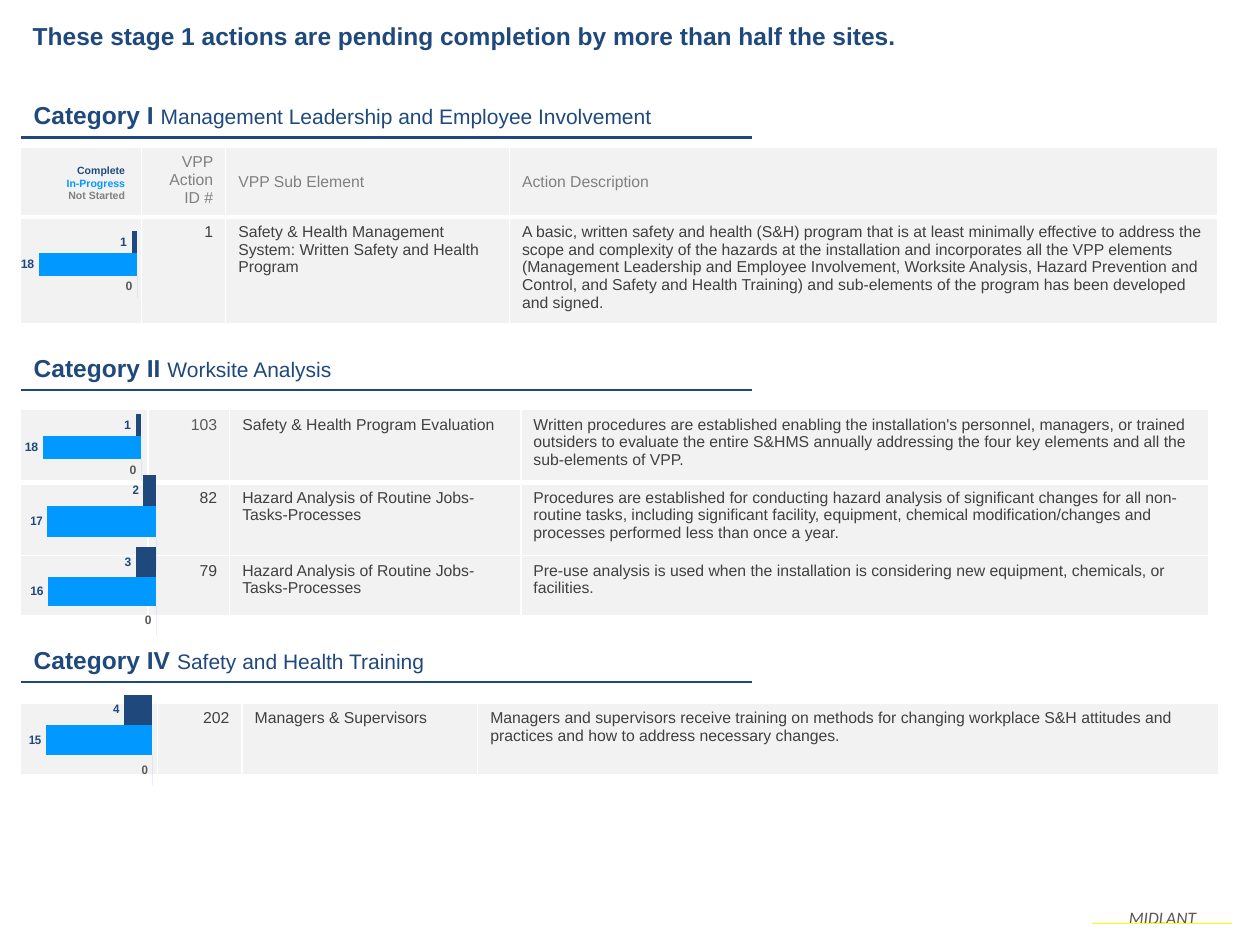
from dataclasses import dataclass

from lxml import etree
from pptx import Presentation
from pptx import util as u
from pptx.chart.data import CategoryChartData
from pptx.dml.color import RGBColor
from pptx.enum import chart as ch, shapes, text
from pptx.oxml.ns import qn


@dataclass(frozen=True)
class Theme:
    navy: str = "1F497D"
    blue: str = "0198FF"
    bar: str = "558ED5"
    grey: str = "808080"
    dim: str = "595959"
    ink: str = "404040"
    panel: str = "F2F2F2"
    white: str = "FFFFFF"
    yellow: str = "FFFF00"
    body_font: str = "Arial"
    footer_font: str = "Calibri"
    title: int = 14
    subtitle: int = 12
    footer: int = 10
    body: int = 9
    label: int = 7
    legend: int = 6


def sub(parent, tag, **attrs):
    return etree.SubElement(parent, qn(tag), {k: str(v) for k, v in attrs.items()})


class Board:
    def __init__(self, theme, width, height):
        self.t = theme
        self.prs = Presentation()
        self.prs.slide_width, self.prs.slide_height = u.Cm(width), u.Cm(height)
        self.s = self.prs.slides.add_slide(self.prs.slide_layouts[6])

    def style(self, font, size, color, bold=False, italic=False, name=None):
        font.name = name or self.t.body_font
        font.size, font.bold, font.italic = u.Pt(size), bold, italic
        font.color.rgb = RGBColor.from_string(color)

    def text(self, box, paragraphs, align=text.PP_ALIGN.LEFT):
        sp = self.s.shapes.add_textbox(*map(u.Cm, box))
        tf = sp.text_frame
        tf.word_wrap = True
        tf.auto_size = text.MSO_AUTO_SIZE.SHAPE_TO_FIT_TEXT
        for i, runs in enumerate(paragraphs):
            p = tf.add_paragraph() if i else tf.paragraphs[0]
            p.alignment = align
            for words, look in runs:
                r = p.add_run()
                r.text = words
                self.style(r.font, **look)

    def line(self, x1, x2, y, color, width):
        sp = self.s.shapes.add_connector(
            shapes.MSO_CONNECTOR.STRAIGHT, *map(u.Cm, (x1, y, x2, y)))
        sp.line.color.rgb = RGBColor.from_string(color)
        sp.line.width = u.Pt(width)
        sub(sp.element.spPr, "a:effectLst")

    def heading(self, y, category, name, width=14.4):
        look = dict(color=self.t.navy)
        self.text((0.43, y, width, 0.86), [[
            (category + " ", dict(look, size=self.t.title, bold=True)),
            (name, dict(look, size=self.t.subtitle))]])
        self.line(0.43, 15.16, y + 0.87, self.t.navy, 1.5)

    def border(self, cell, top, bottom):
        tc_pr = cell._tc.get_or_add_tcPr()
        for side, width in zip("LRTB", (1, 1, top, bottom)):
            ln = sub(tc_pr, "a:ln" + side, w=u.Pt(width))
            sub(sub(ln, "a:solidFill"), "a:srgbClr", val=self.t.white)

    def table(self, y, cols, heights, rows, thick_row=0, header=False, id_colors=()):
        tbl = self.s.shapes.add_table(
            len(rows), len(cols), *map(u.Cm, (0.41, y, sum(cols), sum(heights)))).table
        tbl.first_row = tbl.horz_banding = False
        for col, width in zip(tbl.columns, cols):
            col.width = u.Cm(width)
        for i, row in enumerate(rows):
            tbl.rows[i].height = u.Cm(heights[i])
            is_head = header and i == 0
            for j, words in enumerate(("", *row)):
                cell = tbl.cell(i, j)
                self.border(cell, 3 if i == thick_row + 1 else 1, 3 if i == thick_row else 1)
                cell.fill.solid()
                cell.fill.fore_color.rgb = RGBColor.from_string(self.t.panel)
                if not words:
                    continue
                if is_head and j > 1:
                    cell.vertical_anchor = text.MSO_ANCHOR.MIDDLE
                p = cell.text_frame.paragraphs[0]
                p.text = words
                p.alignment = text.PP_ALIGN.RIGHT if j == 1 else text.PP_ALIGN.LEFT
                color = self.t.grey if is_head else self.t.ink
                if j == 1 and i < len(id_colors):
                    color = id_colors[i]
                self.style(p.runs[0].font, self.t.body, color)

    def chart(self, box, values, layout=None):
        data = CategoryChartData()
        data.categories = ["1", "2", "3"]
        data.add_series("Series 1", values)
        chart = self.s.shapes.add_chart(
            ch.XL_CHART_TYPE.BAR_CLUSTERED, *map(u.Cm, box), data).chart
        chart.has_legend = chart.has_title = False
        self.style(chart.font, 10, "000000", name=self.t.footer_font)
        for axis in (chart.category_axis, chart.value_axis):
            axis.has_major_gridlines = False
            axis.reverse_order = True
            axis.visible = False
        plot = chart.plots[0]
        plot.vary_by_categories = False
        plot.gap_width, plot.overlap = 0, -15
        series = plot.series[0]
        for fmt, color in ((series.format, self.t.bar),
                           (series.points[0].format, self.t.navy),
                           (series.points[1].format, self.t.blue)):
            fmt.fill.solid()
            fmt.fill.fore_color.rgb = RGBColor.from_string(color)
        labels = series.data_labels
        labels.show_value = True
        zero = series.points[2].data_label
        for label, color in ((labels, self.t.navy), (zero, self.t.dim)):
            label.position = ch.XL_LABEL_POSITION.OUTSIDE_END
            self.style(label.font, self.t.label, color, bold=True)
        root = chart.element.find(qn("c:chart"))
        area = root.find(qn("c:plotArea"))
        sub(sub(area, "c:spPr"), "a:noFill")
        frame = etree.Element(qn("c:spPr"))
        sub(frame, "a:noFill")
        sub(sub(frame, "a:ln"), "a:noFill")
        root.addnext(frame)
        if layout:
            for old in area.findall(qn("c:layout")):
                area.remove(old)
            node = etree.Element(qn("c:layout"))
            area.insert(0, node)
            manual = sub(node, "c:manualLayout")
            for tag, val in (("layoutTarget", "inner"), ("xMode", "edge"), ("yMode", "edge"),
                             *zip("xywh", layout)):
                sub(manual, "c:" + tag, val=val)


def main():
    t = Theme()
    b = Board(t, 25.4, 19.05)
    b.text((20.75, 18.16, 3.61, 0.69),
           [[("MIDLANT", dict(size=t.footer, color=t.dim, italic=True, name=t.footer_font))]],
           text.PP_ALIGN.RIGHT)
    b.line(24.84, 22.02, 18.62, t.yellow, 0.75)
    b.text((0.41, 0.3, 20.35, 0.86),
           [[("These stage 1 actions are pending completion by more than half the sites.",
              dict(size=t.title, color=t.navy, bold=True))]])

    inset = (0.08, 0.18, 0.74, 0.67)
    b.heading(1.9, "Category I", "Management Leadership and Employee Involvement")
    b.table(2.97, (2.44, 1.7, 5.72, 14.27), (1.4, 2.16), [
        ("VPP Action ID #", "VPP Sub Element", "Action Description"),
        ("1", "Safety & Health Management System: Written Safety and Health Program",
         "A basic, written safety and health (S&H) program that is at least minimally effective "
         "to address the scope and complexity of the hazards at the installation and incorporates "
         "all the VPP elements (Management Leadership and Employee Involvement, Worksite Analysis, "
         "Hazard Prevention and Control, and Safety and Health Training) and sub-elements of the "
         "program has been developed and signed.")], header=True)
    b.text((1.07, 3.18, 1.7, 1.02),
           [[(words, dict(size=t.legend, color=color, bold=True))] for words, color in (
               ("Complete", t.navy), ("In-Progress", t.blue), ("Not Started", t.grey))],
           text.PP_ALIGN.RIGHT)
    b.chart((0.33, 4.29, 2.97, 2.03), (1, 18, 0), inset)

    b.heading(6.99, "Category II", "Worksite Analysis", 12.7)
    routine = "Hazard Analysis of Routine Jobs-Tasks-Processes"
    b.table(8.26, (2.57, 1.65, 5.87, 13.87), (1.47, 1.47, 1.22), [
        ("103", "Safety & Health Program Evaluation",
         "Written procedures are established enabling the installation's personnel, managers, or "
         "trained outsiders to evaluate the entire S&HMS annually addressing the four key elements "
         "and all the sub-elements of VPP."),
        ("82", routine,
         "Procedures are established for conducting hazard analysis of significant changes for all "
         "non-routine tasks, including significant facility, equipment, chemical "
         "modification/changes and processes performed less than once a year."),
        ("79", routine,
         "Pre-use analysis is used when the installation is considering new equipment, chemicals, "
         "or facilities.")], id_colors=(t.dim,))
    b.chart((0.41, 7.98, 2.97, 2.03), (1, 18, 0), inset)
    b.chart((0.61, 9.53, 2.59, 1.98), (2, 17, 0))
    b.chart((0.61, 11, 2.59, 1.85), (3, 16, 0))

    b.heading(12.88, "Category IV", "Safety and Health Training")
    b.table(14.17, (2.77, 1.7, 4.75, 14.94), (1.47,), [
        ("202", "Managers & Supervisors",
         "Managers and supervisors receive training on methods for changing workplace S&H "
         "attitudes and practices and how to address necessary changes.")])
    b.chart((0.58, 13.97, 2.54, 1.9), (4, 15, 0))
    b.prs.save("out.pptx")


if __name__ == "__main__":
    main()
